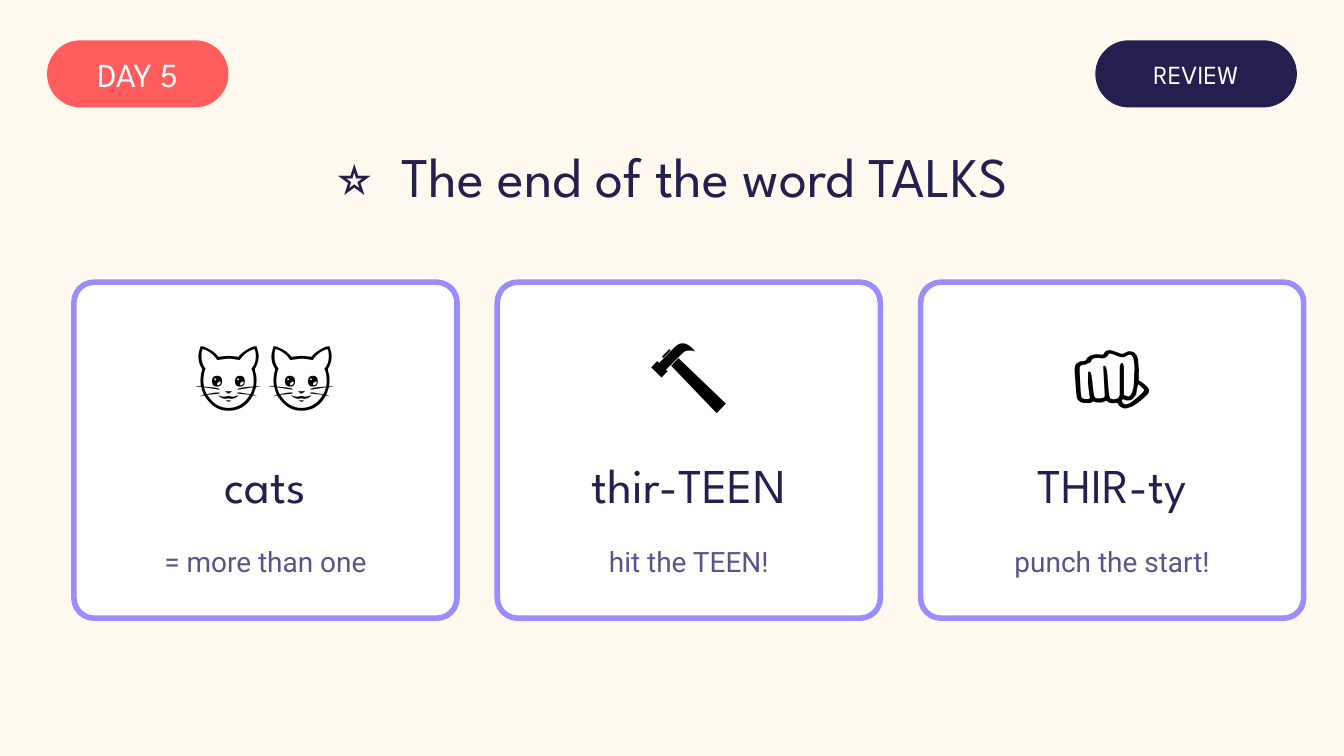
from pptx import Presentation
from pptx.dml.color import RGBColor
from pptx.enum.shapes import MSO_SHAPE
from pptx.enum.text import MSO_ANCHOR, PP_ALIGN
from pptx.util import Inches, Pt

COLORS = {
    "cream": "FFF9EF", "coral": "FF5D5D", "navy": "241F4E", "white": "FFFFFF",
    "lilac": "9B8CFF", "violet": "5A548A", "black": "000000",
}
FORMATS = {
    "day": {"name": "League Spartan", "size": Pt(18), "color": "white"},
    "tag": {"name": "League Spartan", "size": Pt(14), "color": "white"},
    "title": {"name": "League Spartan", "size": Pt(30), "color": "navy"},
    "icon": {"name": "Calibri", "size": Pt(48), "color": "black"},
    "word": {"name": "League Spartan", "size": Pt(26), "color": "navy"},
    "hint": {"name": "Roboto", "size": Pt(15), "color": "violet"},
}


def add_panel(box, fill, adjustment, line=None):
    """Add a rounded rectangle, outlined only when a line colour is given."""
    shape = slide.shapes.add_shape(MSO_SHAPE.ROUNDED_RECTANGLE, *map(Inches, box))
    shape.adjustments[0] = adjustment
    shape.shadow.inherit = False
    shape.fill.solid()
    shape.fill.fore_color.rgb = RGBColor.from_string(COLORS[fill])
    if line:
        shape.line.color.rgb = RGBColor.from_string(COLORS[line])
        shape.line.width = Pt(3)
    else:
        shape.line.fill.background()


def add_text(box, style, *texts, inset=None):
    """Add a centred text box with one run per text and return its runs."""
    frame = slide.shapes.add_textbox(*map(Inches, box)).text_frame
    settings = {"word_wrap": True, "vertical_anchor": MSO_ANCHOR.MIDDLE}
    if inset is not None:
        for side in ("left", "top", "right", "bottom"):
            settings[f"margin_{side}"] = inset
    for name, value in settings.items():
        setattr(frame, name, value)
    paragraph = frame.paragraphs[0]
    paragraph.alignment = PP_ALIGN.CENTER
    for text in texts:
        run = paragraph.add_run()
        run.text = text
        for name, value in FORMATS[style].items():
            if name == "color":
                run.font.color.rgb = RGBColor.from_string(COLORS[value])
            else:
                setattr(run.font, name, value)
    return paragraph.runs


# A 16:9 slide, ten inches wide
presentation = Presentation()
presentation.slide_width = Inches(10)
presentation.slide_height = presentation.slide_width * 9 // 16
slide = presentation.slides.add_slide(presentation.slide_layouts[6])
slide.background.fill.solid()
slide.background.fill.fore_color.rgb = RGBColor.from_string(COLORS["cream"])

# Header pills sit the same distance from both slide edges
margin = 0.35
pills = [
    (margin, 1.35, "coral", "day", "DAY 5"),
    (10 - margin - 1.5, 1.5, "navy", "tag", "REVIEW"),
]
for left, width, fill, style, label in pills:
    box = (left, 0.3, width, 0.5)
    add_panel(box, fill, 0.5)
    add_text(box, style, label, inset=0)

# Letter spacing widens the gap between the star and the title
star, title = add_text((0, 0.95, 10, 0.7), "title", "⭐ ", "The end of the word TALKS")
star.font._element.set("spc", "375")

# Three equal cards, each with an icon, a word and a hint
card_width, gap = 2.85, 0.3
rows = {"icon": (2.3, 0.9), "word": (3.3, 0.6), "hint": (3.95, 0.45)}
cards = [
    ("🐱🐱", "cats", "= more than one"),
    ("🔨", "thir-TEEN", "hit the TEEN!"),
    ("👊", "THIR-ty", "punch the start!"),
]
for column, card in enumerate(cards):
    left = 0.55 + column * (card_width + gap)
    add_panel((left, 2.1, card_width, 2.5), "white", 0.06, line="lilac")
    for (style, (top, height)), text in zip(rows.items(), card):
        add_text((left, top, card_width, height), style, text)

presentation.save("out.pptx")
